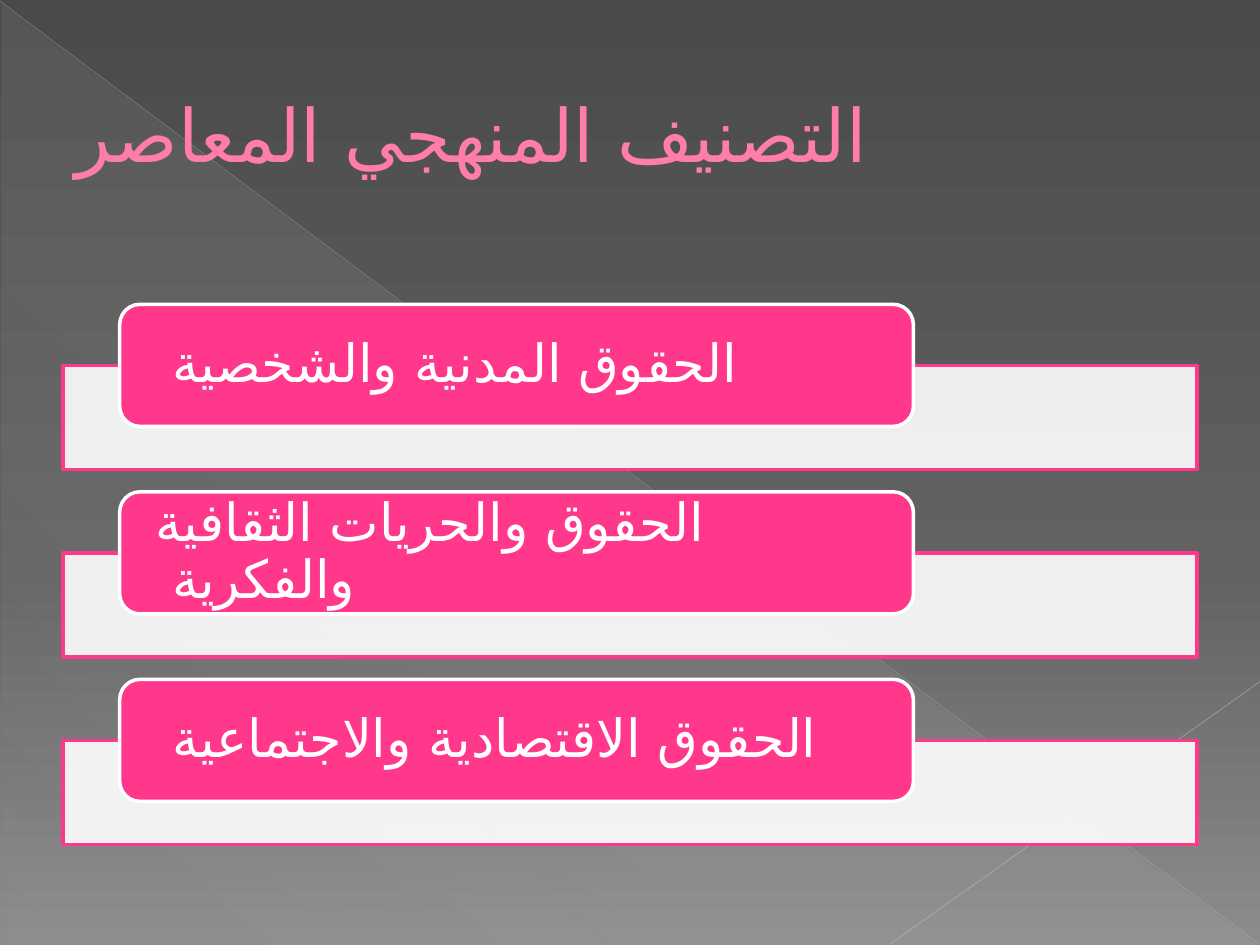
from lxml import etree
from pptx import Presentation
from pptx.dml.color import RGBColor
from pptx.enum import shapes, text
from pptx.oxml import ns
from pptx.util import Pt

TITLE = "التصنيف المنهجي المعاصر"
CATEGORIES = [
    "الحقوق المدنية والشخصية ",
    "الحقوق والحريات الثقافية والفكرية ",
    "الحقوق الاقتصادية والاجتماعية ",
]
FONT = "League Spartan"
ARABIC_FONT = "DejaVu Sans"
PINK = RGBColor(0xFF, 0x38, 0x8C)
LIGHT_PINK = RGBColor(0xFF, 0x7D, 0xA7)
WHITE = RGBColor(0xFF, 0xFF, 0xFF)
SILVER = RGBColor(0xD2, 0xD2, 0xD2)
BACKGROUND_STOPS = [
    (0, RGBColor(0x4A, 0x4A, 0x4A), 100),
    (60, RGBColor(0x62, 0x62, 0x62), 100),
    (100, RGBColor(0x8C, 0x8C, 0x8C), 100),
]
TRIANGLE_STOPS = [(0, SILVER, 10), (70, SILVER, 8), (100, SILVER, 1)]
LINES = [
    ((0, 0.7), (719.3, 539.3), RGBColor(0xBF, 0xBF, 0xBF), 0.39, 35),
    ((720, 389.5), (509, 539.3), RGBColor(0xC6, 0xC6, 0xC6), 0.47, 45),
]
FIRST_BAR_TOP, ROW_STEP = 208.8, 107.15
LABEL_RISE = 34.9


def add_child(parent, tag, **attributes):
    return etree.SubElement(parent, ns.qn(tag), attributes)


def set_alpha(element, percent):
    color = element.find(".//" + ns.qn("a:srgbClr"))
    add_child(color, "a:alpha", val=str(percent * 1000))


def set_gradient(fill, element, stops, angle):
    fill.gradient()
    fill.gradient_angle = angle
    stop_list = element.find(".//" + ns.qn("a:gsLst"))
    for child in list(stop_list):
        stop_list.remove(child)
    for position, color, alpha in stops:
        stop = add_child(stop_list, "a:gs", pos=str(position * 1000))
        add_child(stop, "a:srgbClr", val=str(color))
        set_alpha(stop, alpha)


def add_box(slide, kind, left, top, width, height, fill, line):
    shape = slide.shapes.add_shape(kind, Pt(left), Pt(top), Pt(width), Pt(height))
    shape.shadow.inherit = False
    shape.fill.solid()
    shape.fill.fore_color.rgb = fill
    shape.line.color.rgb = line
    shape.line.width = Pt(2)
    return shape


def add_text(slide, words, left, top, width, height, size, color, inset, inset_y):
    frame = slide.shapes.add_textbox(Pt(left), Pt(top), Pt(width), Pt(height)).text_frame
    frame.word_wrap = True
    frame.vertical_anchor = text.MSO_ANCHOR.MIDDLE
    frame.margin_left = frame.margin_right = Pt(inset)
    frame.margin_top = frame.margin_bottom = Pt(inset_y)
    frame.text = words
    paragraph = frame.paragraphs[0]
    paragraph.alignment = text.PP_ALIGN.LEFT
    paragraph._p.get_or_add_pPr().set("rtl", "1")
    font = paragraph.runs[0].font
    font.size = Pt(size)
    font.name = FONT
    font.color.rgb = color
    add_child(font._element, "a:cs", typeface=ARABIC_FONT)
    return paragraph


def add_backdrop(slide):
    set_gradient(slide.background.fill, slide.element, BACKGROUND_STOPS, 270)
    triangle = slide.shapes.add_shape(
        shapes.MSO_SHAPE.RIGHT_TRIANGLE, Pt(0.7), Pt(1.4), Pt(718.6), Pt(538.6))
    triangle.shadow.inherit = False
    triangle.line.fill.background()
    set_gradient(triangle.fill, triangle.element, TRIANGLE_STOPS, 227)
    for start, end, color, width, alpha in LINES:
        line = slide.shapes.add_connector(
            shapes.MSO_CONNECTOR.STRAIGHT, *(Pt(value) for value in start + end))
        line.line.color.rgb = color
        line.line.width = Pt(width)
        set_alpha(line.element, alpha)
        add_child(line.element.spPr, "a:effectLst")


def add_category(slide, words, top):
    bar = add_box(slide, shapes.MSO_SHAPE.RECTANGLE, 36, top, 648, 59.6, WHITE, PINK)
    set_alpha(bar.element, 90)
    label_top = top - LABEL_RISE
    add_box(slide, shapes.MSO_SHAPE.ROUNDED_RECTANGLE,
            68.4, label_top, 453.6, 69.8, PINK, WHITE)
    paragraph = add_text(slide, words, 71.8, label_top + 3.4, 446.8, 63,
                         30, WHITE, 17.15, 0)
    paragraph.line_spacing = 0.9


def main():
    presentation = Presentation()
    presentation.slide_width, presentation.slide_height = Pt(720), Pt(540)
    slide = presentation.slides.add_slide(presentation.slide_layouts[6])
    add_backdrop(slide)
    add_text(slide, TITLE, 36, 21, 648, 110, 42, LIGHT_PINK, 7.2, 3.6)
    for index, words in enumerate(CATEGORIES):
        add_category(slide, words, FIRST_BAR_TOP + index * ROW_STEP)
    presentation.save("out.pptx")


if __name__ == "__main__":
    main()
